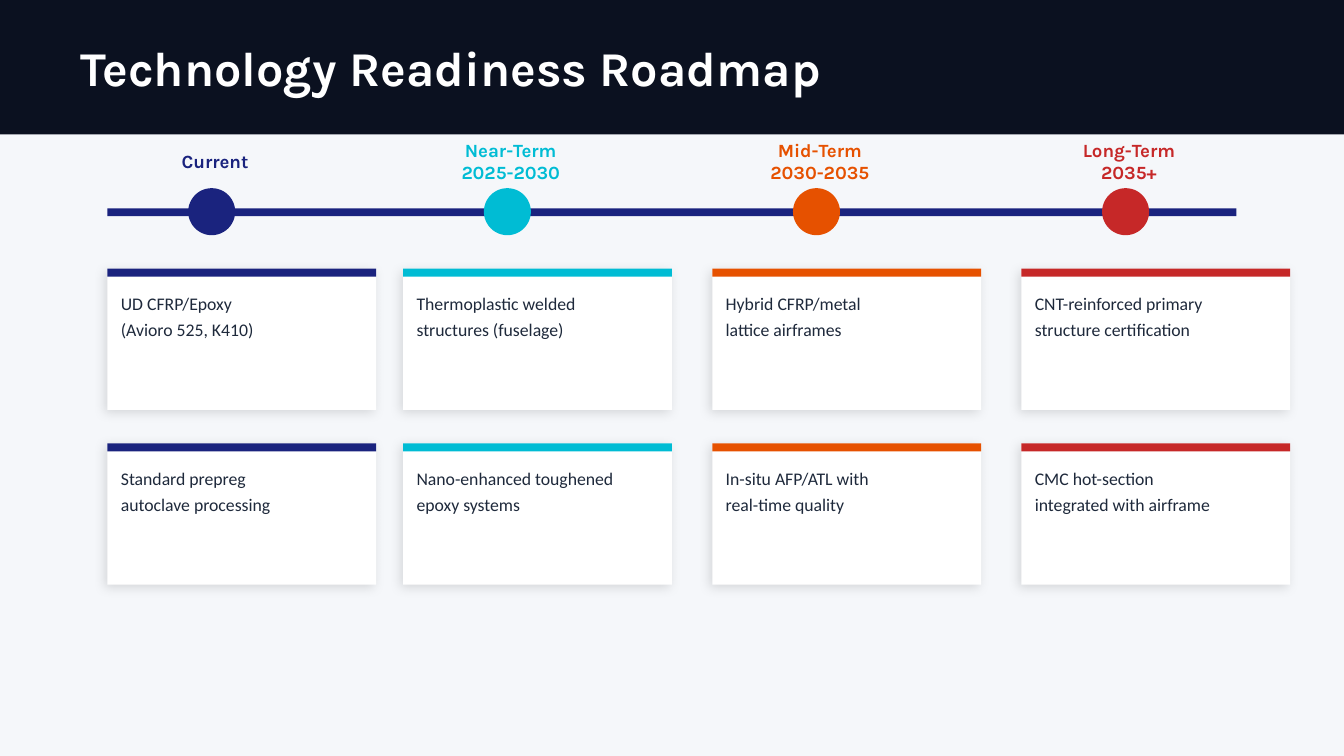
from lxml import etree
from pptx import Presentation, util as u
from pptx.dml.color import RGBColor
from pptx.enum import shapes, text
from pptx.oxml.ns import qn

PX = 9144  # 100 px to the inch
RECT, OVAL = shapes.MSO_SHAPE.RECTANGLE, shapes.MSO_SHAPE.OVAL
NAVY, WHITE = "1A237E", "FFFFFF"

prs = Presentation()
prs.slide_width = 1000 * PX
prs.slide_height = prs.slide_width * 9 // 16
s = prs.slides.add_slide(prs.slide_layouts[6])
s.background.fill.solid()
s.background.fill.fore_color.rgb = RGBColor.from_string("F5F7FA")


def add_shape(kind, x, y, w, h, color):
    sp = s.shapes.add_shape(kind, x * PX, y * PX, w * PX, h * PX)
    sp.shadow.inherit = False
    sp.fill.solid()
    sp.fill.fore_color.rgb = RGBColor.from_string(color)
    sp.line.fill.background()
    return sp


def add_text(x, y, w, h, words, size, color, font="Karla", bold=True,
             align=None, anchor=text.MSO_ANCHOR.MIDDLE, spacing=None):
    tf = s.shapes.add_textbox(x * PX, y * PX, w * PX, h * PX).text_frame
    tf.word_wrap = True
    tf.vertical_anchor = anchor
    tf.margin_left = tf.margin_right = tf.margin_top = tf.margin_bottom = 0
    tf.text = words
    for p in tf.paragraphs:
        p.alignment = align
        p.line_spacing = spacing
        for r in p.runs:
            r.font.name, r.font.size, r.font.bold = font, u.Pt(size), bold
            r.font.color.rgb = RGBColor.from_string(color)


# Header and timeline
add_shape(RECT, 0, 0, 1000, 100, "0B1120")
add_text(60, 15, 850, 70, "Technology Readiness Roadmap", 26, WHITE)
add_shape(RECT, 80, 155, 840, 6, NAVY)

phases = [
    (80, NAVY, "Current",
     ["UD CFRP/Epoxy\n(Avioro 525, K410)", "Standard prepreg\nautoclave processing"]),
    (300, "00BCD4", "Near-Term\n2025-2030",
     ["Thermoplastic welded\nstructures (fuselage)", "Nano-enhanced toughened\nepoxy systems"]),
    (530, "E65100", "Mid-Term\n2030-2035",
     ["Hybrid CFRP/metal\nlattice airframes", "In-situ AFP/ATL with\nreal-time quality"]),
    (760, "C62828", "Long-Term\n2035+",
     ["CNT-reinforced primary\nstructure certification", "CMC hot-section\nintegrated with airframe"]),
]

for x, color, label, cards in phases:
    add_shape(OVAL, x + 60, 140, 35, 35, color)
    add_text(x, 100, 160, 40, label, 10, color, align=text.PP_ALIGN.CENTER)
    for row, words in enumerate(cards):
        y = 200 + 130 * row
        card = add_shape(RECT, x, y, 200, 105, WHITE)
        effects = card._element.spPr.find(qn("a:effectLst"))
        shadow = etree.SubElement(effects, qn("a:outerShdw"), blurRad=str(u.Pt(6)),
                                  dist=str(u.Pt(2)), dir=str(135 * 60000),
                                  algn="bl", rotWithShape="0")
        black = etree.SubElement(shadow, qn("a:srgbClr"), val="000000")
        etree.SubElement(black, qn("a:alpha"), val="12000")
        add_shape(RECT, x, y, 200, 6, color)
        add_text(x + 10, y + 15, 180, 80, words, 9.5, "1E293B", font="Calibri",
                 bold=False, anchor=text.MSO_ANCHOR.TOP, spacing=1.2)

prs.save("out.pptx")
